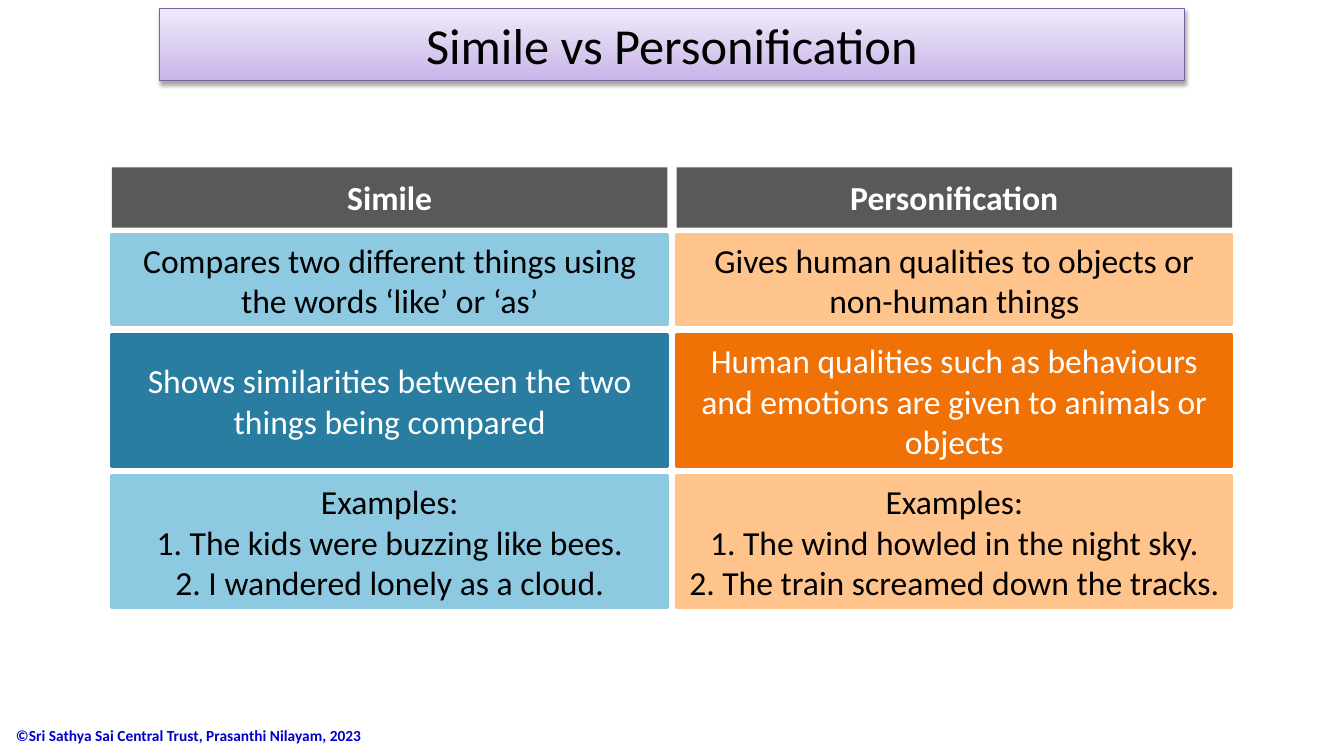
import pptx
import pptx.util
import pptx.dml.color
import pptx.enum.shapes
import pptx.enum.text
import pptx.oxml
import pptx.oxml.ns

Inches = pptx.util.Inches
Pt = pptx.util.Pt
RGBColor = pptx.dml.color.RGBColor
PP_ALIGN = pptx.enum.text.PP_ALIGN
MIDDLE = pptx.enum.text.MSO_ANCHOR.MIDDLE

BLACK = RGBColor(0x00, 0x00, 0x00)
WHITE = RGBColor(0xFF, 0xFF, 0xFF)
GREY = RGBColor(0x59, 0x59, 0x59)
LIGHT_BLUE = RGBColor(0x8D, 0xC9, 0xE0)
DARK_BLUE = RGBColor(0x29, 0x7D, 0xA0)
LIGHT_ORANGE = RGBColor(0xFF, 0xC3, 0x8C)
DARK_ORANGE = RGBColor(0xF0, 0x72, 0x06)
LILAC_TOP = RGBColor(0xF0, 0xEA, 0xF9)
LILAC_BOTTOM = RGBColor(0xC9, 0xB5, 0xE8)
PURPLE = RGBColor(0x7D, 0x60, 0xA0)
FOOTER_BLUE = RGBColor(0x00, 0x00, 0xCC)

FONT = "Calibri"
TITLE = "Simile vs Personification"
FOOTER = "©Sri Sathya Sai Central Trust, Prasanthi Nilayam, 2023"

ROWS = [
    dict(top=1.66, height=0.6, fills=(GREY, GREY), color=WHITE, header=True,
         cells=(["Simile"], ["Personification"])),
    dict(top=2.33, height=0.89, fills=(LIGHT_BLUE, LIGHT_ORANGE), color=BLACK, header=False,
         cells=(["Compares two different things using the words ‘like’ or ‘as’"],
                ["Gives human qualities to objects or non-human things"])),
    dict(top=3.32, height=1.31, fills=(DARK_BLUE, DARK_ORANGE), color=WHITE, header=False,
         cells=(["Shows similarities between the two things being compared"],
                ["Human qualities such as behaviours and emotions are given to animals or objects"])),
    dict(top=4.72, height=1.31, fills=(LIGHT_BLUE, LIGHT_ORANGE), color=BLACK, header=False,
         cells=(["Examples:", "1. The kids were buzzing like bees.",
                 "2. I wandered lonely as a cloud."],
                ["Examples:", "1. The wind howled in the night sky.",
                 "2. The train screamed down the tracks."])),
]
LEFT, COL_WIDTH, COL_STEP = 1.11, 5.51, 5.6

SHADOW = (
    '<a:effectLst %s><a:outerShdw blurRad="40000" dist="23000" dir="5400000" rotWithShape="0">'
    '<a:srgbClr val="000000"><a:alpha val="35000"/></a:srgbClr></a:outerShdw></a:effectLst>'
    % pptx.oxml.ns.nsdecls("a")
)


def write(tf, lines, size, color, bold=False, align=PP_ALIGN.CENTER):
    tf.word_wrap = True
    tf.vertical_anchor = MIDDLE
    for i, line in enumerate(lines):
        p = tf.paragraphs[0] if i == 0 else tf.add_paragraph()
        p.alignment = align
        r = p.add_run()
        r.text = line
        r.font.name = FONT
        r.font.size = Pt(size)
        r.font.bold = bold
        r.font.color.rgb = color


def add_title(s):
    sp = s.shapes.title
    sp.left, sp.top, sp.width, sp.height = map(Inches, (1.58, 0.08, 10.17, 0.72))
    sp.fill.gradient()
    sp.fill.gradient_angle = 270
    for stop, color in zip(sp.fill.gradient_stops, (LILAC_TOP, LILAC_BOTTOM)):
        stop.color.rgb = color
    sp.line.color.rgb = PURPLE
    sp.line.width = Pt(0.75)
    sp._element.spPr.append(pptx.oxml.parse_xml(SHADOW))
    write(sp.text_frame, [TITLE], 36, BLACK)


def add_cell(s, row, col):
    sp = s.shapes.add_shape(
        pptx.enum.shapes.MSO_SHAPE.RECTANGLE,
        Inches(LEFT + col * COL_STEP), Inches(row["top"]),
        Inches(COL_WIDTH), Inches(row["height"]))
    sp.shadow.inherit = False
    sp.fill.solid()
    sp.fill.fore_color.rgb = row["fills"][col]
    if row["header"]:
        sp.line.fill.background()
    else:
        sp.line.color.rgb = row["fills"][col]
        sp.line.width = Pt(2)
    write(sp.text_frame, row["cells"][col], 24, row["color"], row["header"])


def main():
    prs = pptx.Presentation()
    prs.slide_width, prs.slide_height = Inches(13.33), Inches(7.5)
    s = prs.slides.add_slide(prs.slide_layouts[5])
    add_title(s)
    for row in ROWS:
        for col in range(2):
            add_cell(s, row, col)
    footer = s.shapes.add_textbox(Inches(0.06), Inches(7.1), Inches(3.81), Inches(0.4))
    write(footer.text_frame, [FOOTER], 11, FOOTER_BLUE, True, PP_ALIGN.LEFT)
    prs.save("out.pptx")


if __name__ == "__main__":
    main()
